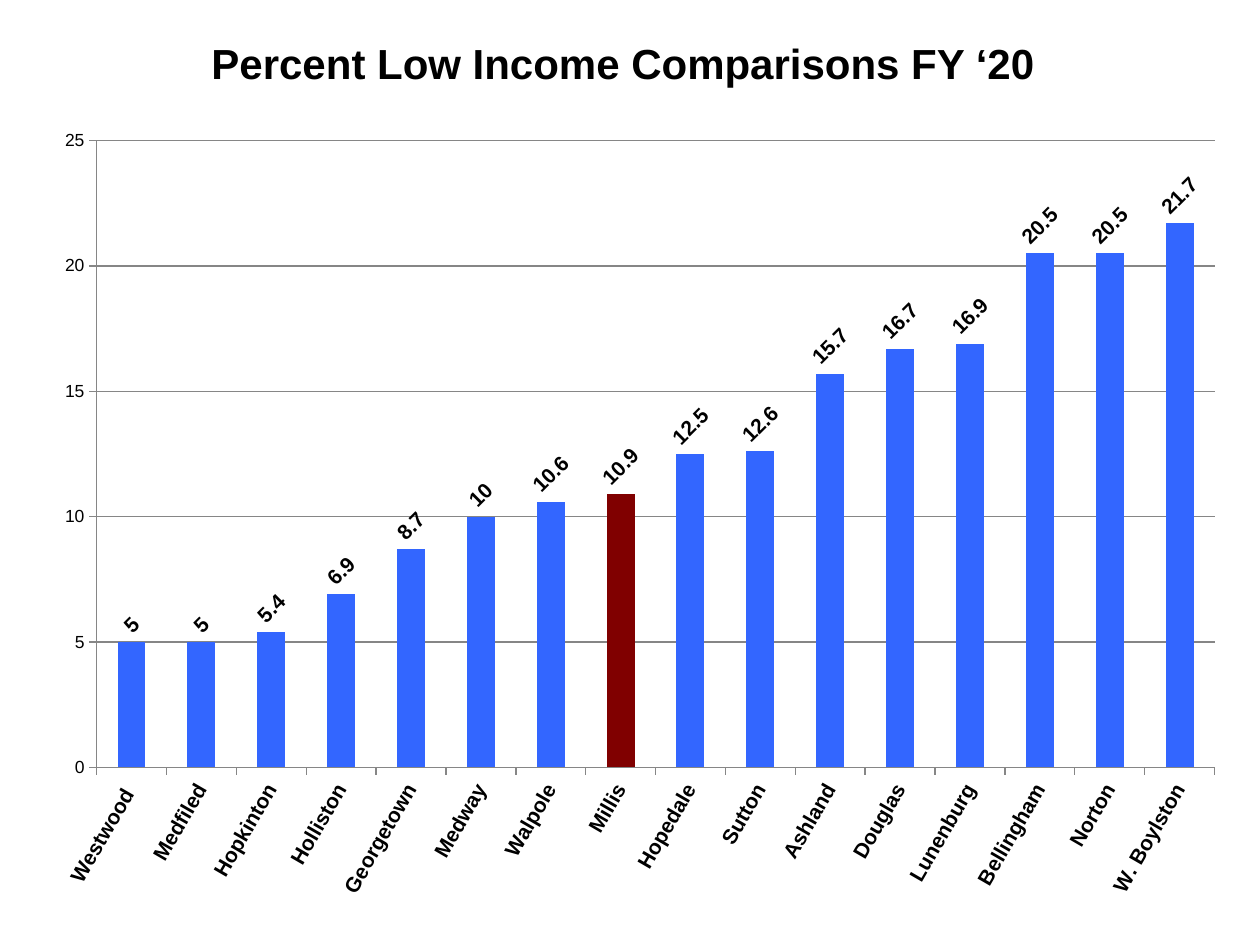
from lxml import etree
from pptx import Presentation
from pptx import util as u
from pptx.chart import data as chart_data
from pptx.dml import color
from pptx.enum import chart as charts, text
from pptx.oxml import ns

FONT = "Arial"
COLOURS = {"text": "000000", "bar": "3366FF", "highlight": "800000", "line": "868686"}
HIGHLIGHT = "Millis"
LOW_INCOME = {
    "Westwood ": 5, "Medfiled": 5, "Hopkinton": 5.4, "Holliston": 6.9,
    "Georgetown": 8.7, "Medway": 10, "Walpole": 10.6, "Millis": 10.9,
    "Hopedale": 12.5, "Sutton": 12.6, "Ashland": 15.7, "Douglas": 16.7,
    "Lunenburg": 16.9, "Bellingham": 20.5, "Norton": 20.5, "W. Boylston": 21.7,
}
PLOT_AREA = {"x": 0.046, "y": 0.031, "w": 0.934, "h": 0.786}


def rgb(name):
    return color.RGBColor.from_string(COLOURS[name])


def style_font(font, size, bold=False):
    font.name = FONT
    font.size = u.Pt(size)
    font.bold = bold
    font.color.rgb = rgb("text")


def rotate_text(element, degrees):
    body = element.find(ns.qn("c:txPr")).find(ns.qn("a:bodyPr"))
    body.set("rot", str(degrees * 60000))
    body.set("vert", "horz")


def style_line(line):
    line.color.rgb = rgb("line")
    line.width = u.Pt(0.75)


def set_plot_area(chart):
    area = chart._chartSpace.chart.plotArea
    for old in area.findall(ns.qn("c:layout")):
        area.remove(old)
    layout = etree.Element(ns.qn("c:layout"))
    manual = etree.SubElement(layout, ns.qn("c:manualLayout"))
    settings = {"layoutTarget": "inner", "xMode": "edge", "yMode": "edge", **PLOT_AREA}
    for tag, value in settings.items():
        etree.SubElement(manual, ns.qn(f"c:{tag}")).set("val", str(value))
    area.insert(0, layout)


def add_title(page, words):
    box = page.shapes.add_textbox(u.Inches(1.58), u.Inches(0.25), u.Inches(6.78), u.Inches(0.5))
    frame = box.text_frame
    frame.word_wrap = False
    frame.auto_size = text.MSO_AUTO_SIZE.SHAPE_TO_FIT_TEXT
    span = frame.paragraphs[0].add_run()
    span.text = words
    style_font(span.font, 24, bold=True)


def style_axes(chart):
    towns, percent = chart.category_axis, chart.value_axis
    for axis in (towns, percent):
        axis.major_tick_mark = charts.XL_TICK_MARK.OUTSIDE
        axis.minor_tick_mark = charts.XL_TICK_MARK.NONE
        style_line(axis.format.line)
    towns.has_major_gridlines = False
    style_font(towns.tick_labels.font, 12, bold=True)
    rotate_text(towns._element, -60)
    percent.minimum_scale, percent.maximum_scale, percent.major_unit = 0, 25, 5
    percent.has_major_gridlines = True
    style_line(percent.major_gridlines.format.line)
    style_font(percent.tick_labels.font, 10)


def style_bars(plot):
    plot.gap_width = 150
    plot.vary_by_categories = False
    series = plot.series[0]
    series.invert_if_negative = False
    series.format.fill.solid()
    series.format.fill.fore_color.rgb = rgb("bar")
    point = series.points[list(LOW_INCOME).index(HIGHLIGHT)]
    point.format.fill.solid()
    point.format.fill.fore_color.rgb = rgb("highlight")
    labels = series.data_labels
    labels.show_value = True
    labels.position = charts.XL_LABEL_POSITION.OUTSIDE_END
    style_font(labels.font, 12, bold=True)
    rotate_text(labels._element, -45)


def add_income_chart(page):
    data = chart_data.CategoryChartData()
    data.categories = list(LOW_INCOME)
    data.add_series("Series 1", list(LOW_INCOME.values()))
    chart = page.shapes.add_chart(
        charts.XL_CHART_TYPE.COLUMN_CLUSTERED,
        u.Inches(0.33), u.Inches(0.92), u.Inches(9.5), u.Inches(6.33), data,
    ).chart
    chart.has_title = False
    chart.has_legend = False
    style_font(chart.font, 10)
    style_axes(chart)
    style_bars(chart.plots[0])
    set_plot_area(chart)


def main():
    deck = Presentation()
    deck.slide_width, deck.slide_height = u.Inches(10), u.Inches(7.5)
    page = deck.slides.add_slide(deck.slide_layouts[6])
    add_title(page, "Percent Low Income Comparisons FY ‘20")
    add_income_chart(page)
    deck.save("out.pptx")


if __name__ == "__main__":
    main()
